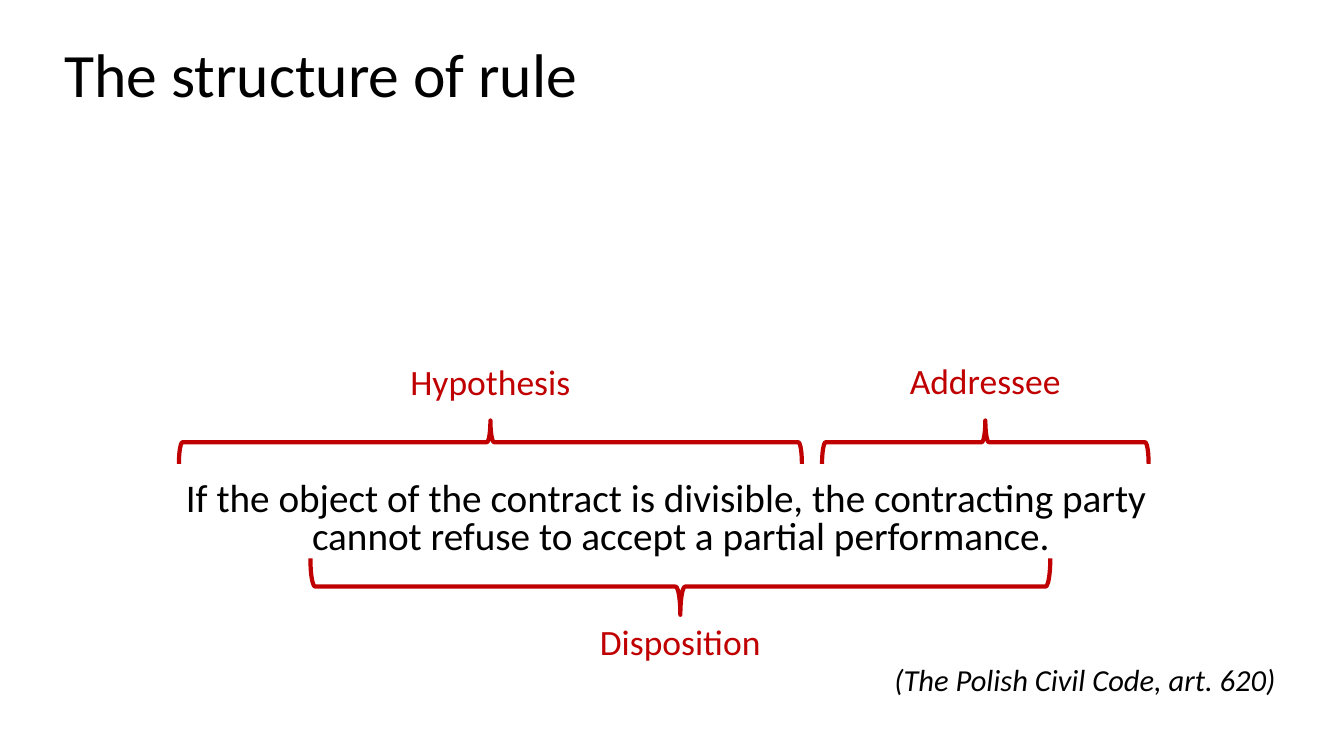
from pptx import Presentation
from pptx.dml.color import RGBColor
from pptx.enum.shapes import MSO_SHAPE
from pptx.enum.text import MSO_ANCHOR, PP_ALIGN
from pptx.util import Pt

BLACK = RGBColor(0, 0, 0)
RED = RGBColor(0xC0, 0, 0)
LEFT, MID, RIGHT = PP_ALIGN.LEFT, PP_ALIGN.CENTER, PP_ALIGN.RIGHT
CENTRE, TOP = MSO_ANCHOR.MIDDLE, MSO_ANCHOR.TOP
BRACE = MSO_SHAPE.LEFT_BRACE

TITLE = "The structure of rule"
RULE = ("If the object of the contract is divisible, the contracting party \v"
        "cannot refuse to accept a partial performance.")
SOURCE = "(The Polish Civil Code, art. 620)"
# label, label top, brace centre x, centre y, span, depth, rotation
PARTS = [
    ("Addressee", 252.7, 703.8, 315.9, 233.3, 31, 90),
    ("Hypothesis", 253.4, 350.3, 315.9, 445, 31, 90),
    ("Disposition", 439.2, 486, 419, 528.5, 40.3, 270),
]
LABEL_W, LABEL_H = 144, 38
BODY_X, BODY_W = 46.1, 865.4


def put(shape, box, text, size, color=BLACK, align=MID, anchor=TOP,
        space=1.0, inset=(7.2, 3.6), italic=False):
    """Place a text shape, fill it with one paragraph and return that."""
    for name, val in zip(("left", "top", "width", "height"), box):
        setattr(shape, name, Pt(val))
    frame = shape.text_frame
    side, edge = map(Pt, inset)
    form = {"word_wrap": True, "vertical_anchor": anchor,
            "margin_left": side, "margin_right": side,
            "margin_top": edge, "margin_bottom": edge}
    for name, val in form.items():
        setattr(frame, name, val)
    frame.text = text
    para = frame.paragraphs[0]
    para.alignment, para.line_spacing = align, space
    for run in para.runs:
        style = {"name": "Calibri", "size": Pt(size), "italic": italic}
        for name, val in style.items():
            setattr(run.font, name, val)
        run.font.color.rgb = color
    return para


def brace(shapes, x, y, span, depth, turn):
    """Draw a brace that spans sideways, centred on x, y."""
    mark = shapes.add_shape(BRACE, Pt(x - depth / 2), Pt(y - span / 2),
                            Pt(depth), Pt(span))
    mark.rotation = turn
    mark.shadow.inherit = False
    mark.fill.background()
    mark.line.color.rgb = RED
    mark.line.width = Pt(3)


def main():
    deck = Presentation()
    deck.slide_width, deck.slide_height = Pt(960), Pt(540)
    slide = deck.slides.add_slide(deck.slide_layouts[5])
    shapes = slide.shapes

    def text_box():
        return shapes.add_textbox(0, 0, 0, 0)

    put(shapes.title, (38.9, 13.7, 614.9, 84.2), TITLE, 44,
        align=LEFT, anchor=CENTRE, space=0.87)
    rule = put(text_box(), (BODY_X, 344.7, BODY_W, 55), RULE, 28,
               space=0.8, inset=(0, 0))
    hang = rule._p.get_or_add_pPr()
    hang.set("marL", str(Pt(15)))
    hang.set("indent", str(-Pt(15)))
    put(text_box(), (BODY_X, 477, BODY_W, 22), SOURCE, 21.8, align=RIGHT,
        space=0.8, inset=(0, 0), italic=True)

    for label, top, x, y, span, depth, turn in PARTS:
        brace(shapes, x, y, span, depth, turn)
        put(text_box(), (x - LABEL_W / 2, top, LABEL_W, LABEL_H),
            label, 25.4, RED)
    deck.save("out.pptx")


if __name__ == "__main__":
    main()
